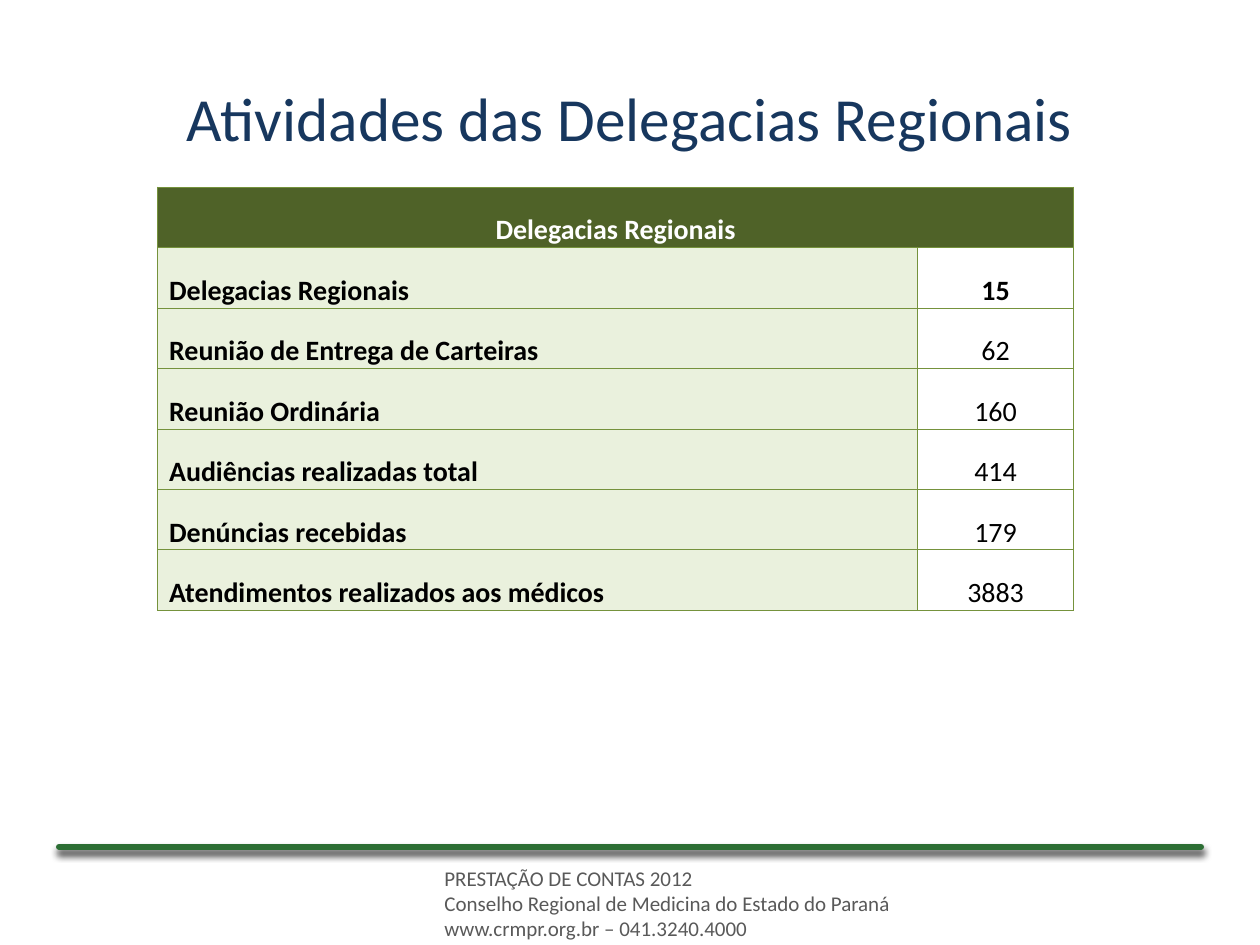
from lxml.etree import SubElement
from pptx import Presentation
from pptx.dml.color import RGBColor
from pptx.enum.shapes import MSO_CONNECTOR
from pptx.enum.text import MSO_ANCHOR as Anchor, PP_ALIGN as Align
from pptx.oxml import parse_xml
from pptx.oxml.ns import nsdecls, qn
from pptx.util import Cm, Pt

NAVY = RGBColor(0x17, 0x37, 0x5E)
GRAY = RGBColor(0x59, 0x59, 0x59)
GREEN = RGBColor(0x2C, 0x6E, 0x34)
OLIVE = RGBColor(0x4F, 0x62, 0x28)
PALE = RGBColor(0xEA, 0xF1, 0xDD)
BORDER = RGBColor(0x75, 0x92, 0x3C)
WHITE = RGBColor(0xFF, 0xFF, 0xFF)
BLACK = RGBColor(0, 0, 0)

HEADING = "Delegacias Regionais"
ACTIVITIES = [
    ("Delegacias Regionais", 15),
    ("Reunião de Entrega de Carteiras", 62),
    ("Reunião Ordinária", 160),
    ("Audiências realizadas total", 414),
    ("Denúncias recebidas", 179),
    ("Atendimentos realizados aos médicos", 3883),
]
FOOTER = [
    "PRESTAÇÃO DE CONTAS 2012",
    "Conselho Regional de Medicina do Estado do Paraná",
    "www.crmpr.org.br – 041.3240.4000",
]


class ReportSlide:
    """Draws styled elements on one slide of the annual report."""

    font = "Calibri"

    def __init__(self, slide):
        self.slide = slide

    def paragraph(self, paragraph, text, size, color, bold=False, align=Align.LEFT):
        paragraph.text = text
        paragraph.alignment = align
        paragraph.font.color.rgb = color
        style = {"name": self.font, "size": Pt(size), "bold": bold}
        for name, value in style.items():
            setattr(paragraph.font, name, value)

    def text(self, lines, left, top, width, height, anchor=Anchor.TOP, **style):
        box = self.slide.shapes.add_textbox(Cm(left), Cm(top), Cm(width), Cm(height))
        frame = box.text_frame
        frame.word_wrap = True
        frame.vertical_anchor = anchor
        for index, line in enumerate(lines):
            paragraph = frame.add_paragraph() if index else frame.paragraphs[0]
            self.paragraph(paragraph, line, **style)

    def rule(self, left, right, y, color, weight):
        rule = self.slide.shapes.add_connector(
            MSO_CONNECTOR.STRAIGHT, Cm(left), Cm(y), Cm(right), Cm(y))
        rule.line.color.rgb = color
        rule.line.width = Pt(weight)
        properties = rule._element.spPr
        properties.find(qn("a:ln")).set("cap", "rnd")
        properties.append(parse_xml(
            f'<a:effectLst {nsdecls("a")}><a:outerShdw blurRad="{Pt(4)}" '
            f'dist="{Pt(3)}" dir="5400000" rotWithShape="0">'
            '<a:srgbClr val="000000"><a:alpha val="73000"/></a:srgbClr>'
            '</a:outerShdw></a:effectLst>'))

    def cell(self, cell, text, color=BLACK, fill=None, inset=0.03, **style):
        layout = {"margin_left": Cm(inset), "margin_right": Cm(0.03),
                  "margin_top": Cm(0.03), "margin_bottom": 0,
                  "vertical_anchor": Anchor.BOTTOM}
        for name, value in layout.items():
            setattr(cell, name, value)
        self.paragraph(cell.text_frame.paragraphs[0], text, 16, color, **style)
        self.outline(cell)
        if fill is None:
            cell.fill.background()
        else:
            cell.fill.solid()
            cell.fill.fore_color.rgb = fill

    def outline(self, cell):
        properties = cell._tc.get_or_add_tcPr()
        for side in ("a:lnL", "a:lnR", "a:lnT", "a:lnB"):
            edge = SubElement(properties, qn(side), w=str(Pt(0.5)))
            solid = SubElement(edge, qn("a:solidFill"))
            SubElement(solid, qn("a:srgbClr"), val=str(BORDER))

    def table(self, heading, rows, left, top, widths, row_height):
        count = len(rows) + 1
        table = self.slide.shapes.add_table(
            count, len(widths), Cm(left), Cm(top),
            Cm(sum(widths)), Cm(row_height * count)).table
        table.first_row = table.horz_banding = False
        for column, width in zip(table.columns, widths):
            column.width = Cm(width)
        title, spanned = table.rows[0].cells
        title.merge(spanned)
        self.outline(spanned)
        self.cell(title, heading, WHITE, OLIVE, bold=True, align=Align.CENTER)
        for index, (activity, total) in enumerate(rows, start=1):
            label, value = table.rows[index].cells
            self.cell(label, activity, fill=PALE, inset=0.23, bold=True)
            self.cell(value, str(total), bold=index == 1, align=Align.CENTER)


def main():
    deck = Presentation()
    deck.slide_width, deck.slide_height = Cm(25.4), Cm(19.05)
    report = ReportSlide(deck.slides.add_slide(deck.slide_layouts[6]))
    report.text(FOOTER, 8.71, 17.32, 12.4, 1.8, size=12, color=GRAY)
    report.rule(1.19, 24.21, 17.07, GREEN, 3.5)
    report.text(["Atividades das Delegacias Regionais"], 1.27, 0.76, 22.86, 3.18,
                Anchor.MIDDLE, size=35, color=NAVY, align=Align.CENTER)
    report.table(HEADING, ACTIVITIES, 3.18, 3.77, [15.32, 3.14], 1.22)
    deck.save("out.pptx")


if __name__ == "__main__":
    main()
